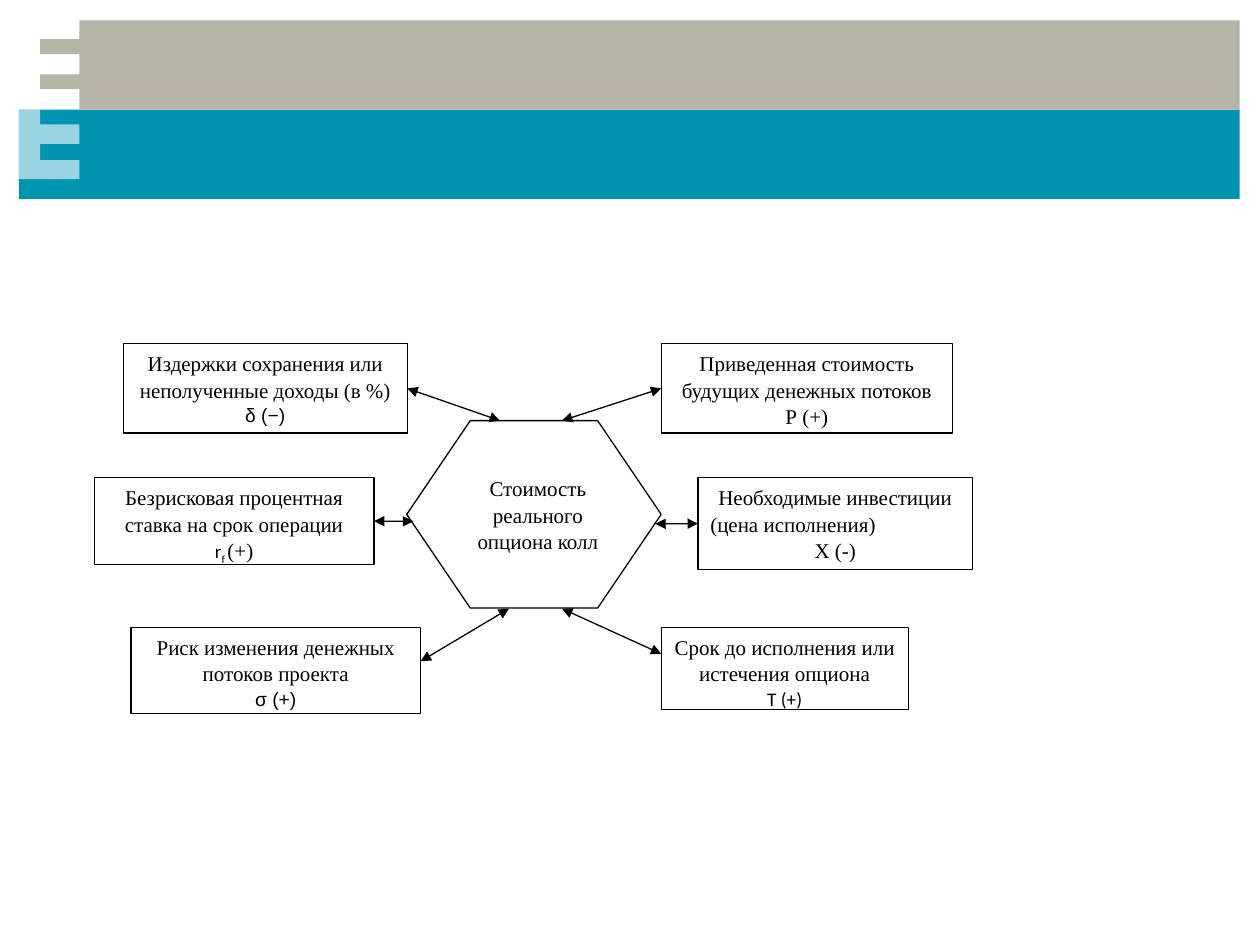
from dataclasses import dataclass

from lxml import etree
from pptx import Presentation
from pptx import util as u
from pptx.dml.color import RGBColor
from pptx.enum import shapes, text
from pptx.oxml import ns


@dataclass(frozen=True)
class Theme:
    white: str = "FFFFFF"
    black: str = "000000"
    teal: str = "0094B3"
    stone: str = "B5B5A8"
    serif: str = "Times New Roman"
    sans: str = "Arial"
    calm: str = "Calibri"
    body: float = 12
    small: float = 11
    rule: float = 0.75
    lead: float = 1.04


class Deck:
    def __init__(self, theme):
        self.theme = theme
        self.prs = Presentation()
        self.prs.slide_width = u.Cm(25.4)
        self.prs.slide_height = u.Cm(19.05)
        self.slide = self.prs.slides.add_slide(self.prs.slide_layouts[6])

    def paint(self, shape, fill, line=None):
        shape.shadow.inherit = False
        shape.fill.solid()
        shape.fill.fore_color.rgb = RGBColor.from_string(fill)
        if line:
            shape.line.color.rgb = RGBColor.from_string(line)
            shape.line.width = u.Pt(self.theme.rule)
        else:
            shape.line.fill.background()
        return shape

    def form(self, kind, place, fill, line=None):
        area = [u.Cm(n) for n in place]
        return self.paint(self.slide.shapes.add_shape(kind, *area), fill, line)

    def shape(self, points, fill, alpha=None):
        start, *rest = [(u.Cm(x), u.Cm(y)) for x, y in points]
        pen = self.slide.shapes.build_freeform(*start, scale=1.0)
        pen.add_line_segments(rest, close=True)
        free = self.paint(pen.convert_to_shape(), fill)
        if alpha:
            tint = free.element.spPr.find(ns.qn("a:solidFill"))[0]
            etree.SubElement(tint, ns.qn("a:alpha"), val=str(alpha * 1000))

    def box(self, place, lines, line):
        box = self.form(shapes.MSO_SHAPE.RECTANGLE, place, self.theme.white, line)
        frame = box.text_frame
        frame.word_wrap = True
        frame.vertical_anchor = text.MSO_ANCHOR.TOP
        for i, (align, runs) in enumerate(lines):
            para = frame.paragraphs[0] if i == 0 else frame.add_paragraph()
            para.alignment = align
            para.line_spacing = self.theme.lead
            for words, font, size, base in runs:
                self.run(para, words, font, size, base)
        return box

    def run(self, para, words, font, size, base):
        run = para.add_run()
        run.text = words
        run.font.name = font
        run.font.size = u.Pt(size)
        run.font.color.rgb = RGBColor.from_string(self.theme.black)
        if base:
            run.font._element.set("baseline", str(base * 1000))

    def arrow(self, start, end, box=None, side=None):
        ends = [u.Cm(n) for n in (*start, *end)]
        line = self.slide.shapes.add_connector(shapes.MSO_CONNECTOR.STRAIGHT, *ends)
        line.line.color.rgb = RGBColor.from_string(self.theme.black)
        line.line.width = u.Pt(self.theme.rule)
        if box is not None:
            line.begin_connect(box, side)
        stroke = line.line._get_or_add_ln()
        for tip in ("a:headEnd", "a:tailEnd"):
            etree.SubElement(stroke, ns.qn(tip), type="triangle")
        etree.SubElement(line._element.spPr, ns.qn("a:effectLst"))


def main():
    look = Theme()
    deck = Deck(look)
    mid, left = text.PP_ALIGN.CENTER, text.PP_ALIGN.LEFT

    def row(words, font=look.serif, size=look.body, align=mid):
        return align, [(words, font, size, 0)]

    deck.form(shapes.MSO_SHAPE.RECTANGLE, (0.38, 2.21, 24.61, 1.8), look.teal)
    deck.shape([(1.6, 0.41), (24.99, 0.41), (24.99, 2.21), (1.6, 2.21),
                (1.6, 1.8), (0.81, 1.8), (0.81, 1.5), (1.6, 1.5),
                (1.6, 1.09), (0.81, 1.09), (0.81, 0.79), (1.6, 0.79)], look.stone)
    deck.shape([(1.6, 3.61), (1.6, 3.23), (0.81, 3.23), (0.81, 2.9), (1.6, 2.9),
                (1.6, 2.51), (0.81, 2.51), (0.81, 2.21), (0.38, 2.21),
                (0.38, 3.61)], look.white, 60)

    hexa = deck.form(shapes.MSO_SHAPE.HEXAGON, (8.2, 8.48, 5.13, 3.78),
                     look.white, look.black)
    hexa.adjustments[0] = 0.339
    deck.box((9.12, 9.45, 3.45, 1.83),
             [row("Стоимость реального опциона колл")], look.white)

    rate = [("r", look.calm, look.small, 0), ("f ", look.calm, look.small, -25),
            ("(+)", look.serif, look.body, 0)]
    facts = {
        "cost": ((2.49, 6.93, 5.72, 1.8),
                 [row("Издержки сохранения или неполученные доходы (в %)"),
                  row("δ (−)", look.sans, look.small)]),
        "value": ((13.33, 6.93, 5.87, 1.8),
                  [row("Приведенная стоимость будущих денежных потоков"),
                   row("Р (+)")]),
        "rate": ((1.9, 9.63, 5.64, 1.75),
                 [row("Безрисковая процентная ставка на срок операции"),
                  (mid, rate)]),
        "spend": ((14.07, 9.63, 5.54, 1.85),
                  [row("Необходимые инвестиции"),
                   row("(цена исполнения)", align=left), row("Х (-)")]),
        "risk": ((2.64, 12.65, 5.84, 1.73),
                 [row("Риск изменения денежных потоков проекта"),
                  row("σ (+)", look.sans, look.small)]),
        "term": ((13.33, 12.65, 4.98, 1.65),
                 [row("Срок до исполнения или истечения опциона"),
                  row("T (+)", look.calm, look.small)]),
    }
    boxes = {name: deck.box(place, lines, look.black)
             for name, (place, lines) in facts.items()}

    deck.arrow((8.2, 7.83), (10.08, 8.48), boxes["cost"], 3)
    deck.arrow((13.33, 7.83), (11.33, 8.48), boxes["value"], 1)
    deck.arrow((7.54, 10.51), (8.33, 10.51), boxes["rate"], 3)
    deck.arrow((14.07, 10.56), (13.21, 10.56), boxes["spend"], 1)
    deck.arrow((8.48, 13.33), (10.26, 12.27))
    deck.arrow((13.33, 13.18), (11.33, 12.27))
    deck.prs.save("out.pptx")


if __name__ == "__main__":
    main()
